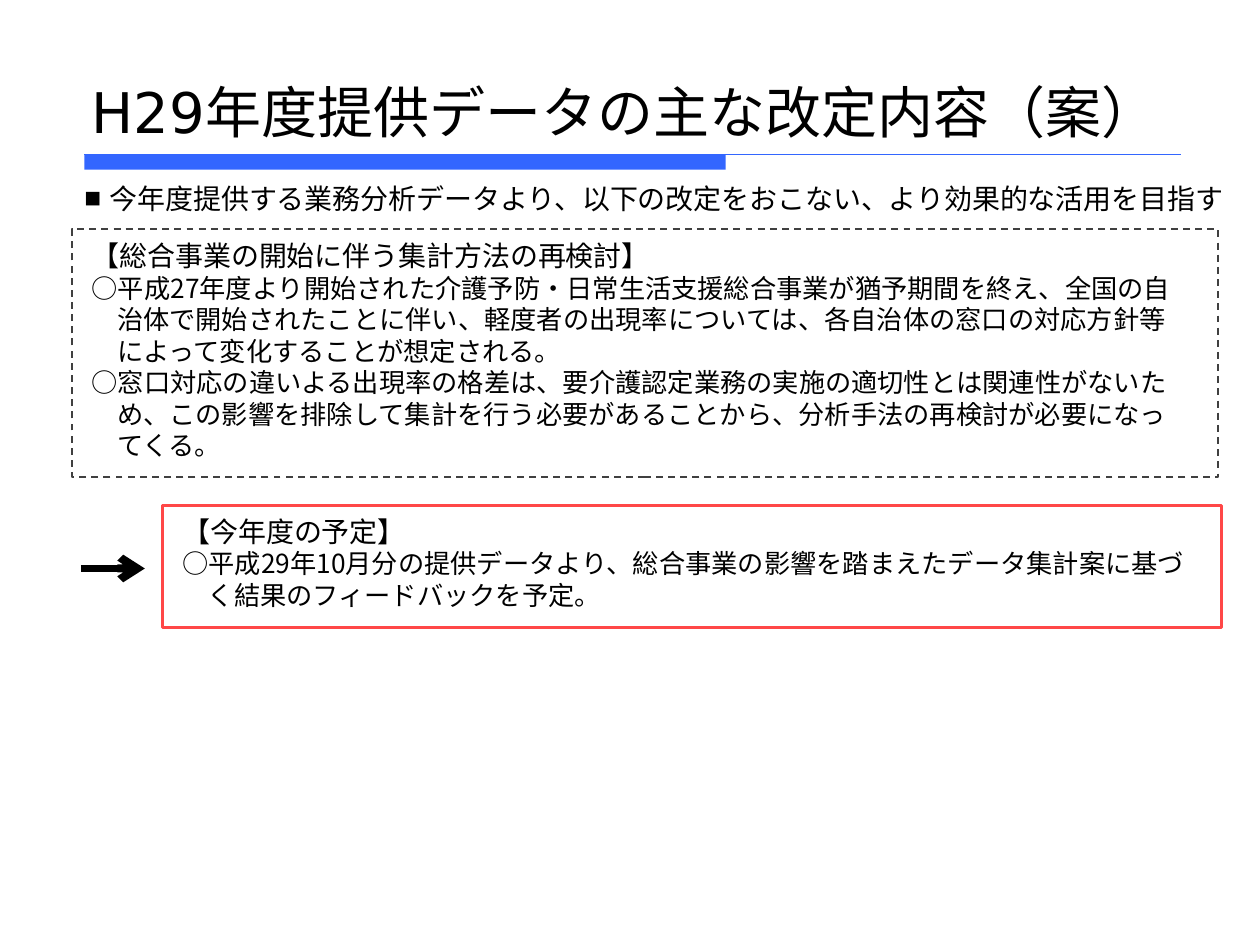
from lxml import etree
from pptx import Presentation
from pptx.dml.color import RGBColor
from pptx.enum.dml import MSO_LINE
from pptx.enum.shapes import MSO_CONNECTOR, MSO_SHAPE
from pptx.enum.text import MSO_ANCHOR
from pptx.oxml.ns import qn
from pptx.util import Cm, Pt

RECTANGLE = MSO_SHAPE.RECTANGLE
STRAIGHT = MSO_CONNECTOR.STRAIGHT
DASH = MSO_LINE.DASH
BOTTOM = MSO_ANCHOR.BOTTOM

COLORS = {"text": "000000", "rule": "3366FF", "issue": "404040", "plan": "FF4747"}
JAPANESE_FONT = "Noto Sans CJK JP"

TITLE = {"size": 32, "font": "DejaVu Sans", "spacing": 38, "indent": 0}
LEAD = {"size": 16, "font": "Arial", "spacing": 18.5, "indent": 0.51, "bullet": "■"}
HEADING = {"size": 16, "font": JAPANESE_FONT, "spacing": 20, "indent": 0.76}
BODY = {"size": 15, "font": JAPANESE_FONT, "spacing": 18, "indent": 0.51}


def color(name):
    return RGBColor.from_string(COLORS[name])


def add_bullet(properties, character):
    font = etree.SubElement(properties, qn("a:buFont"))
    font.set("typeface", "Arial")
    etree.SubElement(properties, qn("a:buChar")).set("char", character)


def write_paragraph(paragraph, text, style):
    paragraph.line_spacing = Pt(style["spacing"])
    properties = paragraph._p.get_or_add_pPr()
    indent = Cm(style["indent"])
    properties.set("marL", str(indent))
    properties.set("indent", str(-indent))
    if "bullet" in style:
        add_bullet(properties, style["bullet"])
    run = paragraph.add_run()
    run.text = text
    font_format = {"size": Pt(style["size"]), "name": style["font"]}
    for attribute, value in font_format.items():
        setattr(run.font, attribute, value)
    run.font.color.rgb = color("text")
    east_asian = etree.SubElement(run._r.get_or_add_rPr(), qn("a:ea"))
    east_asian.set("typeface", JAPANESE_FONT)


def add_text(slide, place, paragraphs, **frame_format):
    frame = slide.shapes.add_textbox(*map(Cm, place)).text_frame
    for attribute, value in {"word_wrap": True, **frame_format}.items():
        setattr(frame, attribute, value)
    for index, (text, style) in enumerate(paragraphs):
        paragraph = frame.add_paragraph() if index else frame.paragraphs[0]
        write_paragraph(paragraph, text, style)


def add_border(slide, place, color_name, width, dash=None):
    border = slide.shapes.add_shape(RECTANGLE, *map(Cm, place))
    border.shadow.inherit = False
    border.fill.background()
    border.line.color.rgb = color(color_name)
    for attribute, value in {"width": Pt(width), "dash_style": dash}.items():
        setattr(border.line, attribute, value)


def add_line(slide, left, right, y, color_name, width, arrow=False):
    line = slide.shapes.add_connector(STRAIGHT, Cm(left), Cm(y), Cm(right), Cm(y))
    line.line.color.rgb = color(color_name)
    line.line.width = Pt(width)
    if arrow:
        tail = etree.SubElement(line.line._get_or_add_ln(), qn("a:tailEnd"))
        tail.set("type", "arrow")
    etree.SubElement(line._element.spPr, qn("a:effectLst"))


def add_title_rule(slide, left, right, y):
    bar = slide.shapes.add_shape(RECTANGLE, Cm(left), Cm(y), Cm(12.93), Cm(0.3))
    bar.shadow.inherit = False
    bar.fill.solid()
    bar.fill.fore_color.rgb = color("rule")
    bar.line.fill.background()
    add_line(slide, left, right, y, "rule", 0.75)


def main():
    presentation = Presentation()
    presentation.slide_width = Cm(25.4)
    presentation.slide_height = Cm(19.05)
    slide = presentation.slides.add_slide(presentation.slide_layouts[6])

    add_title_rule(slide, 1.7, 23.8, 3.12)
    add_text(slide, (1.6, 0.84, 22.2, 2.08),
             [("H29年度提供データの主な改定内容（案）", TITLE)],
             vertical_anchor=BOTTOM, margin_bottom=0)
    add_text(slide, (1.45, 3.56, 23.52, 0.89), [
        ("今年度提供する業務分析データより、以下の改定をおこない、より効果的な活用を目指す", LEAD),
    ])

    add_text(slide, (1.6, 4.65, 22.58, 4.78), [
        ("【総合事業の開始に伴う集計方法の再検討】", HEADING),
        ("○平成27年度より開始された介護予防・日常生活支援総合事業が猶予期間を終え、"
         "全国の自治体で開始されたことに伴い、軽度者の出現率については、"
         "各自治体の窓口の対応方針等によって変化することが想定される。", BODY),
        ("○窓口対応の違いよる出現率の格差は、要介護認定業務の実施の適切性とは関連性がないため、"
         "この影響を排除して集計を行う必要があることから、"
         "分析手法の再検討が必要になってくる。", BODY),
    ])
    add_border(slide, (1.45, 4.62, 23.11, 5), "issue", 1, DASH)

    add_line(slide, 1.63, 2.92, 11.46, "text", 4.5, arrow=True)
    add_text(slide, (3.43, 10.21, 20.83, 2.24), [
        ("【今年度の予定】", HEADING),
        ("○平成29年10月分の提供データより、総合事業の影響を踏まえたデータ集計案に基づく"
         "結果のフィードバックを予定。", BODY),
    ])
    add_border(slide, (3.28, 10.19, 21.34, 2.46), "plan", 1.5)

    presentation.save("out.pptx")


if __name__ == "__main__":
    main()
